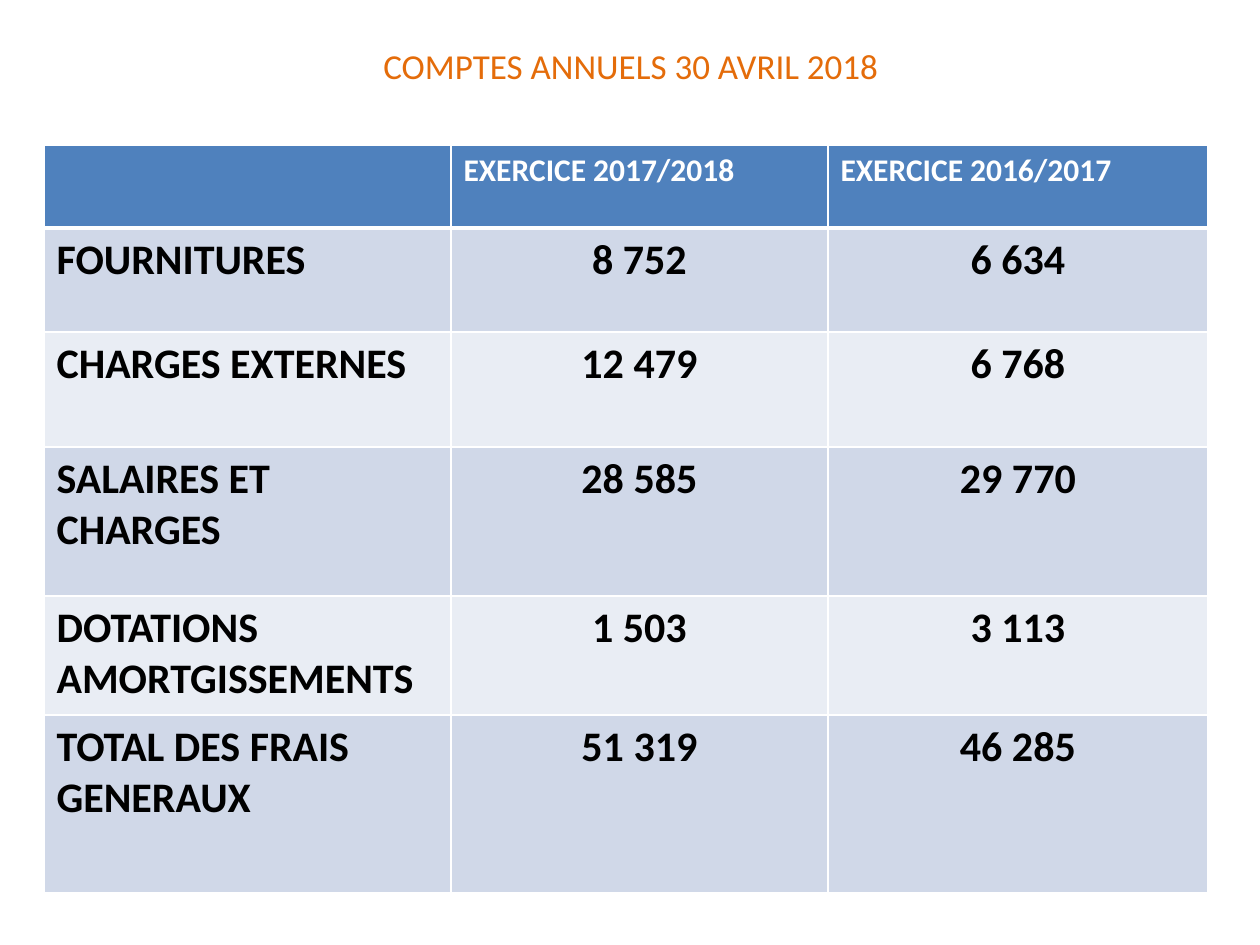
from lxml import etree
from pptx import Presentation
from pptx.dml.color import RGBColor
from pptx.enum.text import MSO_ANCHOR, PP_ALIGN
from pptx.oxml.ns import qn
from pptx.util import Emu, Pt

PX = 914400 // 126
LEFT, CENTER = PP_ALIGN.LEFT, PP_ALIGN.CENTER
MIDDLE = MSO_ANCHOR.MIDDLE
FONT = "Calibri"

ORANGE = RGBColor(0xE4, 0x6C, 0x0A)
BLUE = RGBColor(0x4F, 0x81, 0xBD)
BAND_DARK = RGBColor(0xD0, 0xD8, 0xE8)
BAND_LIGHT = RGBColor(0xE9, 0xED, 0xF4)
WHITE = RGBColor(0xFF, 0xFF, 0xFF)
BLACK = RGBColor(0x00, 0x00, 0x00)

COLUMN_WIDTHS = [407, 377, 380]
ROW_HEIGHTS = [83, 104, 115, 149, 119, 178]
ROWS = [
    ("", "EXERCICE 2017/2018", "EXERCICE 2016/2017"),
    ("FOURNITURES", "8 752", "6 634"),
    ("CHARGES EXTERNES", "12 479", "6 768"),
    ("SALAIRES ET CHARGES", "28 585", "29 770"),
    ("DOTATIONS AMORTGISSEMENTS", "1 503", "3 113"),
    ("TOTAL DES FRAIS GENERAUX", "51 319", "46 285"),
]


def px(value):
    return Emu(value * PX)


def write_text(frame, text, size, color, bold=False, align=LEFT):
    frame.word_wrap = True
    paragraph = frame.paragraphs[0]
    paragraph.alignment = align
    if not text:
        return
    run = paragraph.add_run()
    run.text = text
    run.font.name = FONT
    run.font.size = Pt(size)
    run.font.bold = bold
    run.font.color.rgb = color


def add_title(slide, text):
    box = slide.shapes.add_textbox(px(64), px(-14), px(1134), px(158))
    box.text_frame.vertical_anchor = MIDDLE
    write_text(box.text_frame, text, size=20, color=ORANGE, align=CENTER)


def set_borders(cell, bottom=1, top=1):
    properties = cell._tc.get_or_add_tcPr()
    widths = {"a:lnL": 1, "a:lnR": 1, "a:lnT": top, "a:lnB": bottom}
    for position, (tag, width) in enumerate(widths.items()):
        line = etree.Element(qn(tag), w=str(Pt(width)))
        fill = etree.SubElement(line, qn("a:solidFill"))
        etree.SubElement(fill, qn("a:srgbClr"), val=str(WHITE))
        properties.insert(position, line)


def format_cell(cell, text, row, column):
    cell.fill.solid()
    if row == 0:
        cell.fill.fore_color.rgb = BLUE
        write_text(cell.text_frame, text, size=18, color=WHITE, bold=True)
    else:
        cell.fill.fore_color.rgb = BAND_DARK if row % 2 else BAND_LIGHT
        write_text(cell.text_frame, text, size=24, color=BLACK, bold=True,
                   align=CENTER if column else LEFT)
    set_borders(cell, bottom=3 if row == 0 else 1, top=3 if row == 1 else 1)


def add_accounts_table(slide):
    frame = slide.shapes.add_table(
        len(ROWS), len(COLUMN_WIDTHS), px(44), px(145),
        px(sum(COLUMN_WIDTHS)), px(sum(ROW_HEIGHTS)))
    table = frame.table
    for column, width in zip(table.columns, COLUMN_WIDTHS):
        column.width = px(width)
    for row, height in zip(table.rows, ROW_HEIGHTS):
        row.height = px(height)
    for row, texts in enumerate(ROWS):
        for column, text in enumerate(texts):
            format_cell(table.cell(row, column), text, row, column)


def main():
    presentation = Presentation()
    presentation.slide_width = px(1260)
    presentation.slide_height = px(945)
    slide = presentation.slides.add_slide(presentation.slide_layouts[6])
    add_title(slide, "COMPTES ANNUELS 30 AVRIL 2018")
    add_accounts_table(slide)
    presentation.save("out.pptx")


if __name__ == "__main__":
    main()
